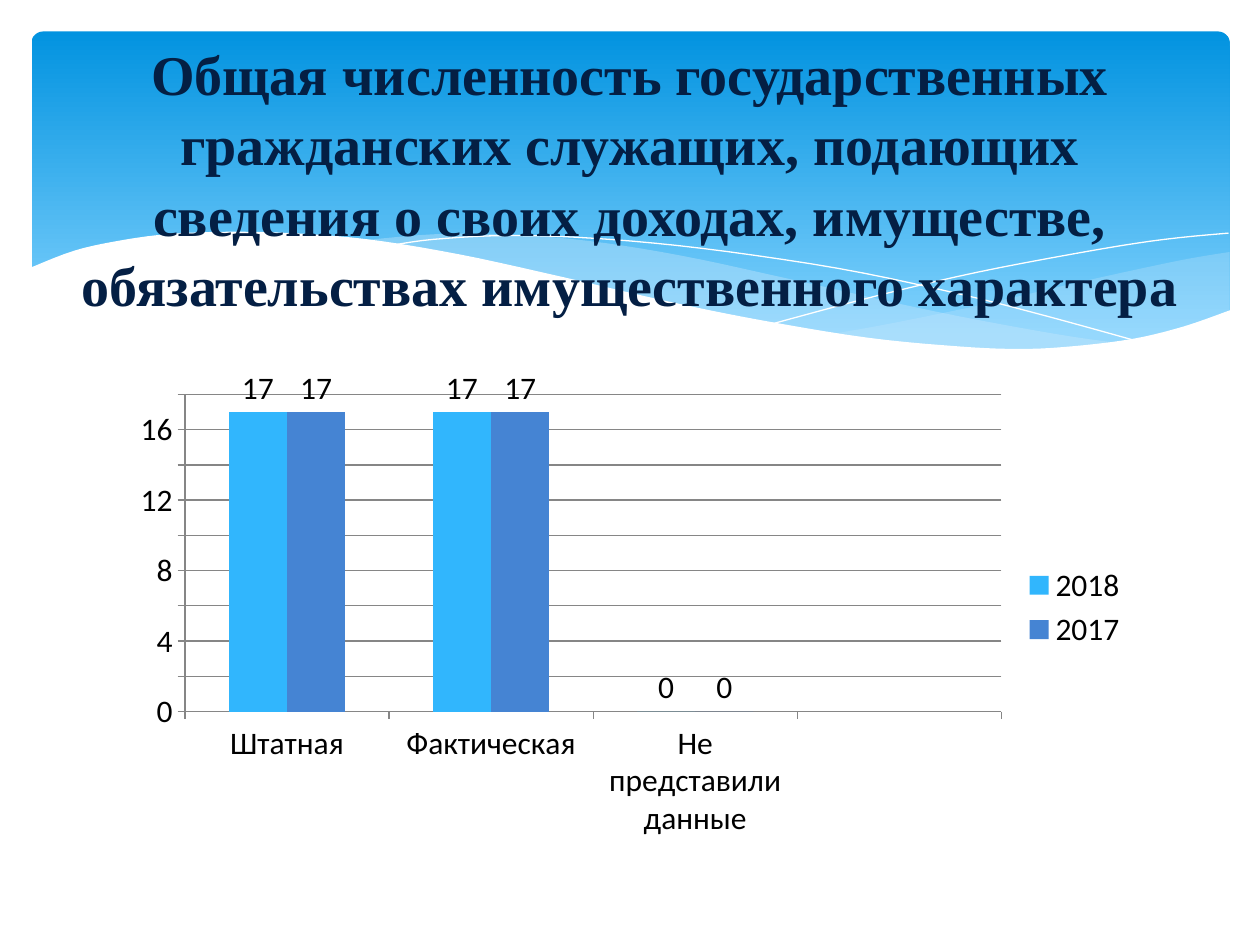
from lxml import etree
from pptx import Presentation
from pptx.chart.data import CategoryChartData
from pptx.dml.color import RGBColor
from pptx.enum.chart import XL_CHART_TYPE, XL_LABEL_POSITION, XL_LEGEND_POSITION, XL_TICK_MARK
from pptx.enum.shapes import MSO_SHAPE
from pptx.enum.text import MSO_ANCHOR, PP_ALIGN
from pptx.oxml import parse_xml
from pptx.oxml.ns import nsdecls, qn
from pptx.util import Inches, Pt

RIGHT_RIBBON = [
    [(9.76, 2), (9.35, 2.07), (8.61, 2.23), (7.79, 2.42), (7.06, 2.57), (6.61, 2.65)],
    [(6.61, 2.65), (7.19, 2.72), (7.69, 2.77), (8.14, 2.78), (8.63, 2.75), (9.13, 2.67), (9.49, 2.57), (9.76, 2.47)],
]
LONG_RIBBON = [
    [(8.93, 2.73), (8.37, 2.65), (7.41, 2.47), (6.29, 2.22), (5.41, 2.03), (4.65, 1.91),
     (3.99, 1.86), (3.44, 1.86), (2.86, 1.91)],
    [(2.86, 1.91), (3.62, 2.03), (4.49, 2.22), (5.3, 2.4), (6.18, 2.58), (6.95, 2.7),
     (7.61, 2.77), (8.18, 2.78), (8.93, 2.73)],
]
FALLING_LINE = [[(3.09, 1.95), (3.44, 1.9), (4.01, 1.87), (4.69, 1.89), (5.56, 1.97),
                 (6.65, 2.13), (7.6, 2.33), (8.31, 2.51), (9.07, 2.72)]]
RISING_LINE = [[(6.13, 2.57), (6.95, 2.35), (7.76, 2.16), (8.66, 1.99), (9.24, 1.9), (9.75, 1.85)]]
WHITE_WAVE = [
    [(9.77, 2.46), (9.4, 2.59), (8.99, 2.69), (8.5, 2.75), (8.09, 2.77), (7.61, 2.75), (6.88, 2.68),
     (6.03, 2.54), (5.29, 2.39), (4.47, 2.2), (3.65, 2.02), (2.92, 1.9), (2.3, 1.85), (1.77, 1.84),
     (1.32, 1.86), (0.95, 1.91), (0.59, 1.99), (0.23, 2.13)],
    [(0.23, 3.29), (9.77, 3.29)],
]


def color(value):
    return RGBColor.from_string(value)


def smooth(points, steps=5):
    padded = [points[0], *points, points[-1]]
    curve = [points[0]]
    for before, start, end, after in zip(padded, padded[1:], padded[2:], padded[3:]):
        for step in range(1, steps + 1):
            t = step / steps
            curve.append(tuple(
                (2 * b + (c - a) * t + (2 * a - 5 * b + 4 * c - d) * t ** 2
                 + (3 * b - a - 3 * c + d) * t ** 3) / 2
                for a, b, c, d in zip(before, start, end, after)))
    return curve


def add_wave(page, box, edges, fill=None, alpha=100):
    left, top = box[:2]
    points = [(left + Inches(x), top + Inches(y)) for edge in edges for x, y in smooth(edge)]
    builder = page.shapes.build_freeform(*points[0], scale=1.0)
    builder.add_line_segments(points[1:], close=fill is not None)
    wave = builder.convert_to_shape()
    wave.shadow.inherit = False
    if fill is None:
        wave.fill.background()
        wave.line.color.rgb = color("FFFFFF")
        wave.line.width = Pt(0)
        return
    wave.line.fill.background()
    wave.fill.solid()
    wave.fill.fore_color.rgb = color(fill)
    if alpha < 100:
        paint = wave.fill._xPr.find(qn("a:solidFill"))[0]
        etree.SubElement(paint, qn("a:alpha")).set("val", str(alpha * 1000))


def add_banner(page, box):
    left, top, width, height = box
    panel = page.shapes.add_shape(MSO_SHAPE.ROUNDED_RECTANGLE, left + Inches(0.25), top + Inches(0.25),
                                  width - Inches(0.49), height - Inches(0.6))
    panel.adjustments[0] = 0.034
    panel.shadow.inherit = False
    panel.line.fill.background()
    panel.fill.gradient()
    panel.fill.gradient_angle = 270
    for stop, (position, tone) in zip(panel.fill.gradient_stops, [(0, "0293E0"), (0.9, "83D3FE")]):
        stop.position = position
        stop.color.rgb = color(tone)
    add_wave(page, box, RIGHT_RIBBON, "C6E7FC", 29)
    add_wave(page, box, LONG_RIBBON, "C6E7FC", 40)
    add_wave(page, box, FALLING_LINE)
    add_wave(page, box, RISING_LINE)
    add_wave(page, box, WHITE_WAVE, "FFFFFF")


def add_staff_chart(page, box):
    data = CategoryChartData()
    data.categories = ["Штатная", "Фактическая", "Не представили данные", ""]
    for year in ("2018", "2017"):
        data.add_series(year, [17, 17, 0, None])
    chart = page.shapes.add_chart(XL_CHART_TYPE.COLUMN_CLUSTERED, *box, data).chart
    chart.has_title = False
    chart.font.name = "Calibri"
    chart.font.size = Pt(18)
    chart.font.color.rgb = color("000000")
    chart.has_legend = True
    chart.legend.position = XL_LEGEND_POSITION.RIGHT
    chart.legend.include_in_layout = False

    plot = chart.plots[0]
    plot.gap_width = 150
    plot.overlap = 0
    plot.vary_by_categories = False
    for series, tone in zip(plot.series, ["31B6FD", "4584D3"]):
        series.format.fill.solid()
        series.format.fill.fore_color.rgb = color(tone)
        series.data_labels.show_value = True
        series.data_labels.position = XL_LABEL_POSITION.OUTSIDE_END

    values = chart.value_axis
    values.minimum_scale, values.maximum_scale, values.major_unit = 0, 18, 2
    values.has_major_gridlines = True
    values.major_gridlines.format.line.color.rgb = color("868686")
    for axis in (values, chart.category_axis):
        axis.major_tick_mark = XL_TICK_MARK.OUTSIDE
        axis.minor_tick_mark = XL_TICK_MARK.NONE
        axis.format.line.color.rgb = color("868686")

    area = chart._chartSpace.chart.plotArea
    for layout in area.findall(qn("c:layout")):
        area.remove(layout)
    area.insert(0, parse_xml(
        f'<c:layout {nsdecls("c")}><c:manualLayout><c:layoutTarget val="inner"/>'
        '<c:xMode val="edge"/><c:yMode val="edge"/>'
        '<c:x val="0.064"/><c:y val="0.05"/><c:w val="0.8"/><c:h val="0.67"/>'
        '</c:manualLayout></c:layout>'))


def add_title(page, box):
    frame = page.shapes.add_textbox(*box).text_frame
    frame.word_wrap = True
    frame.vertical_anchor = MSO_ANCHOR.MIDDLE
    para = frame.paragraphs[0]
    para.text = ("Общая численность государственных гражданских служащих, подающих сведения "
                 "о своих доходах, имуществе, обязательствах имущественного характера")
    para.alignment = PP_ALIGN.CENTER
    para.line_spacing = 1.05
    span = para.runs[0]
    span.font.name = "Times New Roman"
    span.font.size = Pt(32)
    span.font.bold = True
    span.font.color.rgb = color("041F44")


def main():
    deck = Presentation()
    deck.slide_width, deck.slide_height = Inches(10), Inches(7.5)
    page = deck.slides.add_slide(deck.slide_layouts[6])
    add_banner(page, (0, 0, Inches(10), Inches(3.3)))
    add_staff_chart(page, (Inches(0.95), Inches(2.93), Inches(8.1), Inches(3.77)))
    add_title(page, (Inches(0.5), Inches(1.07), Inches(9), Inches(0.67)))
    deck.save("out.pptx")


if __name__ == "__main__":
    main()
